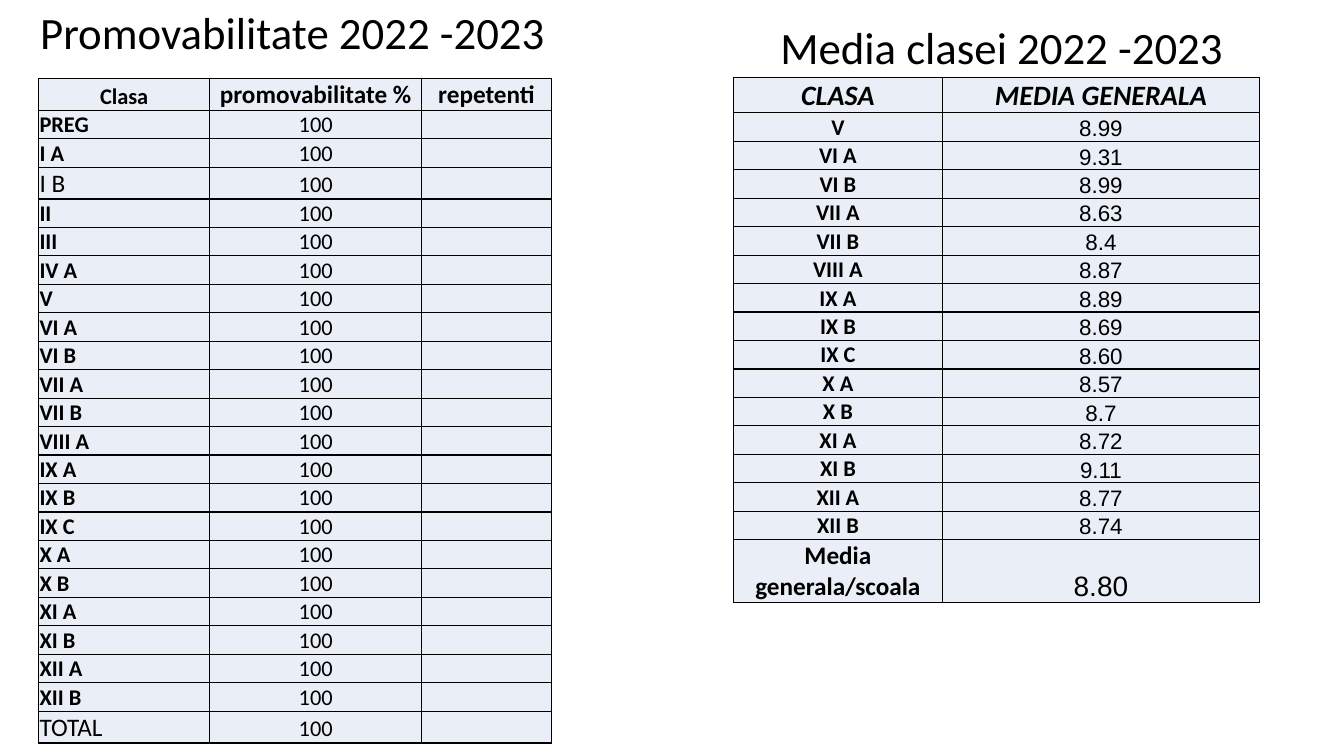
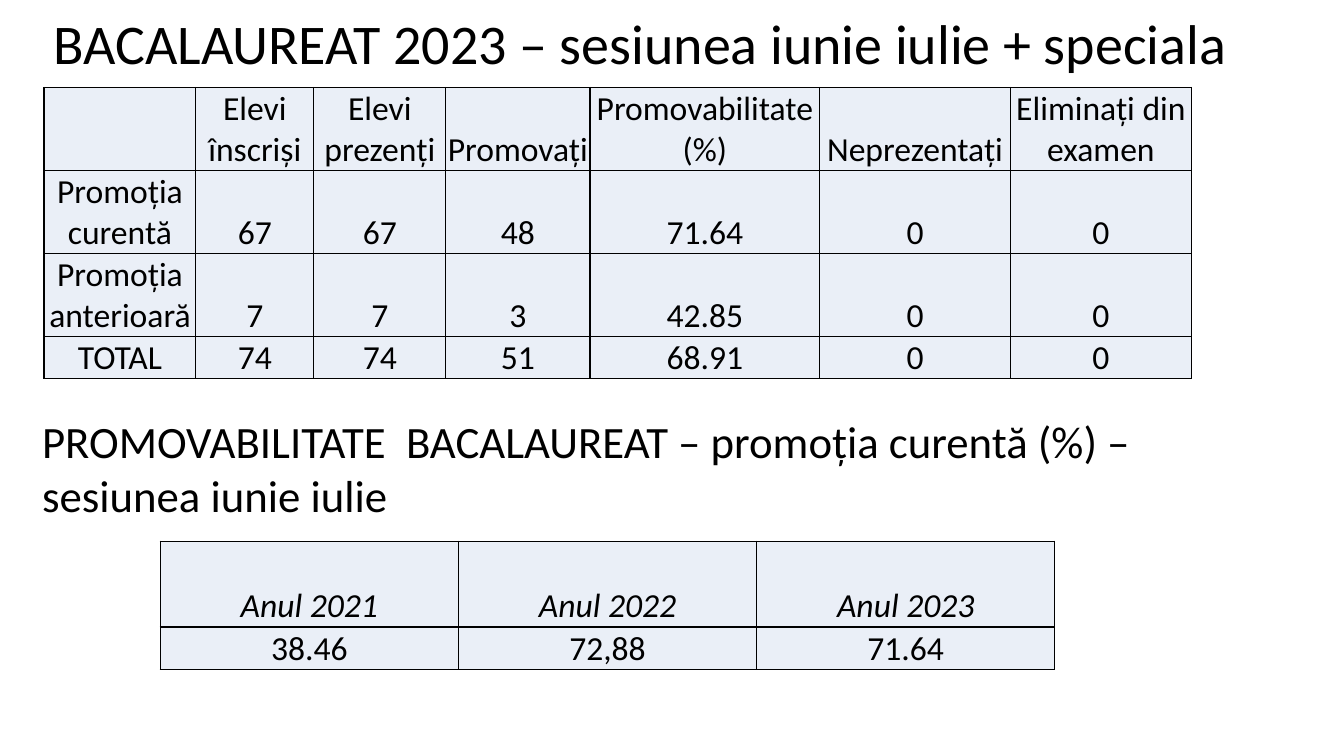
from dataclasses import dataclass, replace

from lxml.etree import SubElement
from pptx import Presentation
from pptx.dml.color import RGBColor
from pptx.enum.text import MSO_ANCHOR, MSO_AUTO_SIZE, PP_ALIGN
from pptx.oxml.ns import qn
from pptx.util import Pt

BLACK = RGBColor(0x00, 0x00, 0x00)
CELL_BLUE = RGBColor(0xEA, 0xEF, 0xF7)
INSET = Pt(0.75)
BORDER = Pt(1)
TITLE_ONLY = 5


@dataclass(frozen=True)
class Style:
    size: float
    bold: bool = False
    italic: bool = False
    font: str = "Calibri"
    align: PP_ALIGN = PP_ALIGN.CENTER


@dataclass(frozen=True)
class Cell:
    text: str
    style: Style


@dataclass(frozen=True)
class Heading:
    text: str
    left: float
    top: float
    width: float
    height: float
    style: Style
    wrap: bool = True


@dataclass(frozen=True)
class Grid:
    left: float
    top: float
    columns: list[float]
    row_heights: list[float]
    rows: list[list[Cell]]


# Shared text styles
BODY = Style(16)
BODY_BOLD = Style(16, bold=True)
BODY_ARIAL = Style(16, font="Arial")
LABEL = Style(16, bold=True, align=PP_ALIGN.LEFT)
LABEL_LARGE = Style(18, align=PP_ALIGN.LEFT)
HEADER = Style(18, bold=True)
HEADER_ITALIC = Style(20, bold=True, italic=True)
EXAM = Style(24)
EXAM_ITALIC = Style(24, italic=True)
HEADING = Style(32)

# Data
LOWER_CLASSES = ["PREG", "I A", "I B", "II", "III", "IV A"]
UPPER_CLASSES = ["V", "VI A", "VI B", "VII A", "VII B", "VIII A", "IX A", "IX B",
                 "IX C", "X A", "X B", "XI A", "XI B", "XII A", "XII B"]
AVERAGES = ["8.99", "9.31", "8.99", "8.63", "8.4", "8.87", "8.89", "8.69",
            "8.60", "8.57", "8.7", "8.72", "9.11", "8.77", "8.74"]
EXAM_RESULTS = [
    ["", "Elevi înscriși", "Elevi prezenți", "Promovați", "Promovabilitate\n(%)",
     "Neprezentați", "Eliminați din examen"],
    ["Promoția curentă", "67", "67", "48", "71.64", "0", "0"],
    ["Promoția anterioară", "7", "7", "3", "42.85", "0", "0"],
    ["TOTAL", "74", "74", "51", "68.91", "0", "0"],
]


def styled_row(texts: list[str], style: Style) -> list[Cell]:
    return [Cell(text, style) for text in texts]


def write_text(text_frame, text: str, style: Style) -> None:
    for index, line in enumerate(text.split("\n")):
        paragraph = text_frame.add_paragraph() if index else text_frame.paragraphs[0]
        paragraph.alignment = style.align
        if not line:
            # An empty cell keeps the text size so that its row does not grow
            SubElement(paragraph._p, qn("a:endParaRPr"), sz=str(style.size * 100))
            continue
        run = paragraph.add_run()
        run.text = line
        run.font.name = style.font
        run.font.size = Pt(style.size)
        run.font.bold = style.bold
        run.font.italic = style.italic
        run.font.color.rgb = BLACK


def add_borders(cell) -> None:
    properties = cell._tc.get_or_add_tcPr()
    for side in ("a:lnL", "a:lnR", "a:lnT", "a:lnB"):
        line = SubElement(properties, qn(side), w=str(BORDER))
        fill = SubElement(line, qn("a:solidFill"))
        SubElement(fill, qn("a:srgbClr"), val=str(BLACK))


def add_grid(slide, grid: Grid) -> None:
    frame = slide.shapes.add_table(
        len(grid.rows), len(grid.columns), Pt(grid.left), Pt(grid.top),
        Pt(sum(grid.columns)), Pt(sum(grid.row_heights)))
    table = frame.table
    table.first_row = False
    table.horz_banding = False
    for column, width in zip(table.columns, grid.columns):
        column.width = Pt(width)
    for row, height, contents in zip(table.rows, grid.row_heights, grid.rows):
        row.height = Pt(height)
        for cell, content in zip(row.cells, contents):
            add_borders(cell)
            cell.fill.solid()
            cell.fill.fore_color.rgb = CELL_BLUE
            cell.margin_left = cell.margin_right = cell.margin_top = INSET
            cell.margin_bottom = 0
            cell.vertical_anchor = MSO_ANCHOR.BOTTOM
            write_text(cell.text_frame, content.text, content.style)


def format_heading(shape, heading: Heading) -> None:
    shape.left, shape.top = Pt(heading.left), Pt(heading.top)
    shape.width, shape.height = Pt(heading.width), Pt(heading.height)
    text_frame = shape.text_frame
    text_frame.auto_size = MSO_AUTO_SIZE.NONE
    text_frame.word_wrap = heading.wrap
    text_frame.vertical_anchor = MSO_ANCHOR.TOP
    write_text(text_frame, heading.text, heading.style)


def add_report_slide(presentation, title: Heading, subtitle: Heading,
                     grids: list[Grid]) -> None:
    slide = presentation.slides.add_slide(presentation.slide_layouts[TITLE_ONLY])
    format_heading(slide.shapes.title, title)
    format_heading(slide.shapes.add_textbox(0, 0, 0, 0), subtitle)
    for grid in grids:
        add_grid(slide, grid)


def pass_rate_grid() -> Grid:
    header = [Cell("Clasa", BODY_BOLD), Cell("promovabilitate %", HEADER),
              Cell("repetenti", HEADER)]
    rows = [header]
    for name in LOWER_CLASSES + UPPER_CLASSES + ["TOTAL"]:
        label = LABEL_LARGE if name in ("I B", "TOTAL") else LABEL
        rows.append([Cell(name, label), Cell("100", BODY), Cell("", BODY)])
    heights = [22.7 if row[0].style.size == 18 or row is header else 20.35
               for row in rows]
    return Grid(27.5, 56, [122.4, 151.2, 92.9], heights, rows)


def average_grid() -> Grid:
    rows = [styled_row(["CLASA", "MEDIA GENERALA"], HEADER_ITALIC)]
    rows += [[Cell(name, BODY_BOLD), Cell(average, BODY_ARIAL)]
             for name, average in zip(UPPER_CLASSES, AVERAGES)]
    rows.append([Cell("Media generala/scoala", HEADER),
                 Cell("8.80", Style(20, font="Arial"))])
    heights = [24.6] + [19.95] * len(UPPER_CLASSES) + [44.3]
    return Grid(524, 55.4, [149, 226.8], heights, rows)


def exam_grid() -> Grid:
    rows = [styled_row(texts, EXAM) for texts in EXAM_RESULTS]
    columns = [108.4, 84.3, 94.3, 103, 164.2, 136, 129.6]
    return Grid(31.5, 62.5, columns, [59.2] * 3 + [29.8], rows)


def yearly_grid() -> Grid:
    rows = [styled_row(["Anul 2021", "Anul 2022", "Anul 2023"], EXAM_ITALIC),
            styled_row(["38.46", "72,88", "71.64"], EXAM)]
    return Grid(114.5, 386.5, [213] * 3, [61.4, 29.8], rows)


def main() -> None:
    presentation = Presentation()
    presentation.slide_width = Pt(960)
    presentation.slide_height = Pt(540)

    # Pass rate and class averages
    add_report_slide(
        presentation,
        Heading("Promovabilitate 2022 -2023", 19.5, 0, 379, 46, HEADING, wrap=False),
        Heading("Media clasei 2022 -2023", 548.6, 10.8, 334, 46, HEADING, wrap=False),
        [pass_rate_grid(), average_grid()])

    # Final exam results
    left_heading = replace(HEADING, align=PP_ALIGN.LEFT)
    add_report_slide(
        presentation,
        Heading("BACALAUREAT 2023 – sesiunea iunie iulie + speciala",
                31, 2.2, 911, 55.5, replace(left_heading, size=40)),
        Heading("PROMOVABILITATE  BACALAUREAT – promoția curentă (%) – "
                "sesiunea iunie iulie", 23, 292.3, 792, 85, left_heading),
        [exam_grid(), yearly_grid()])

    presentation.save("out.pptx")


if __name__ == "__main__":
    main()
